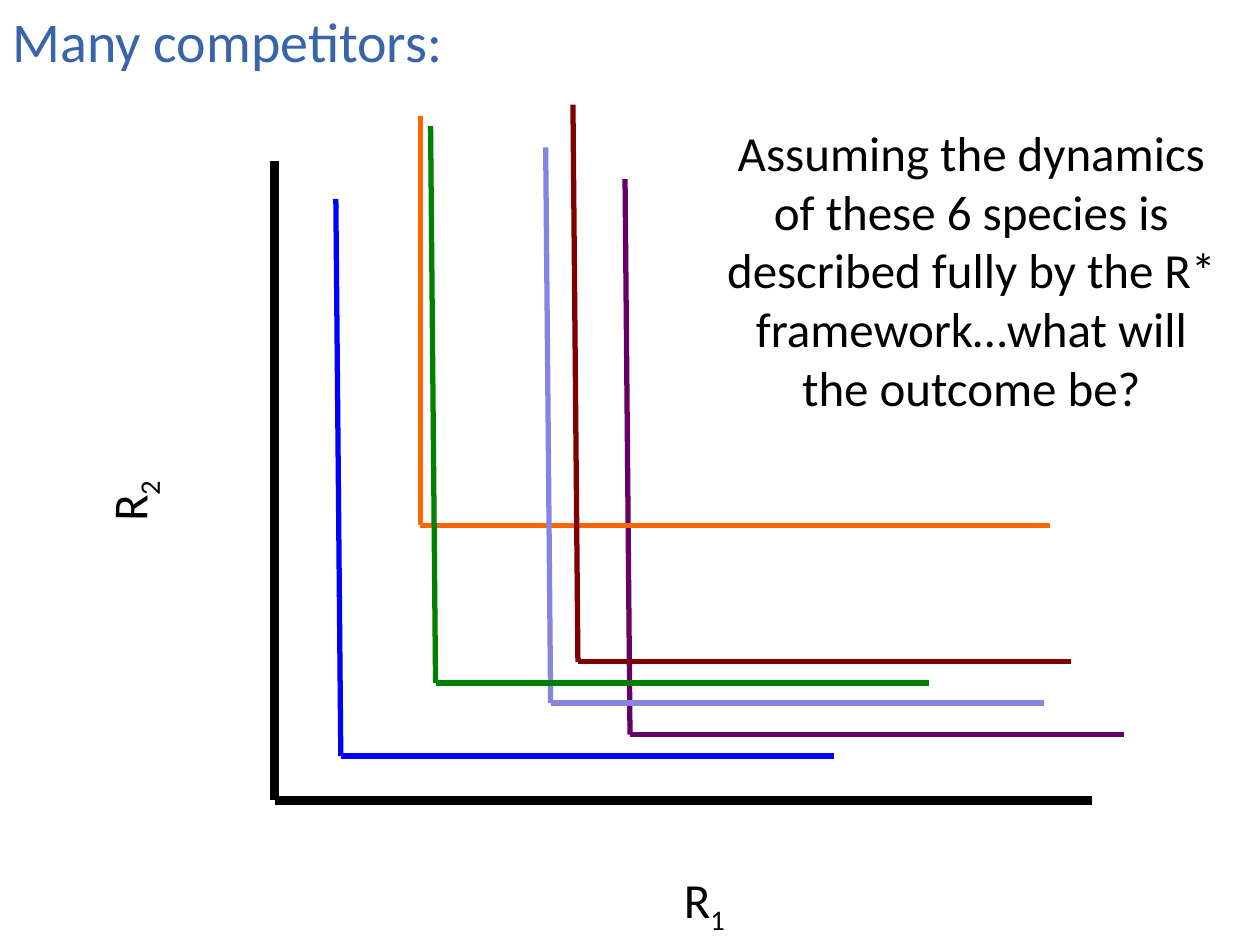
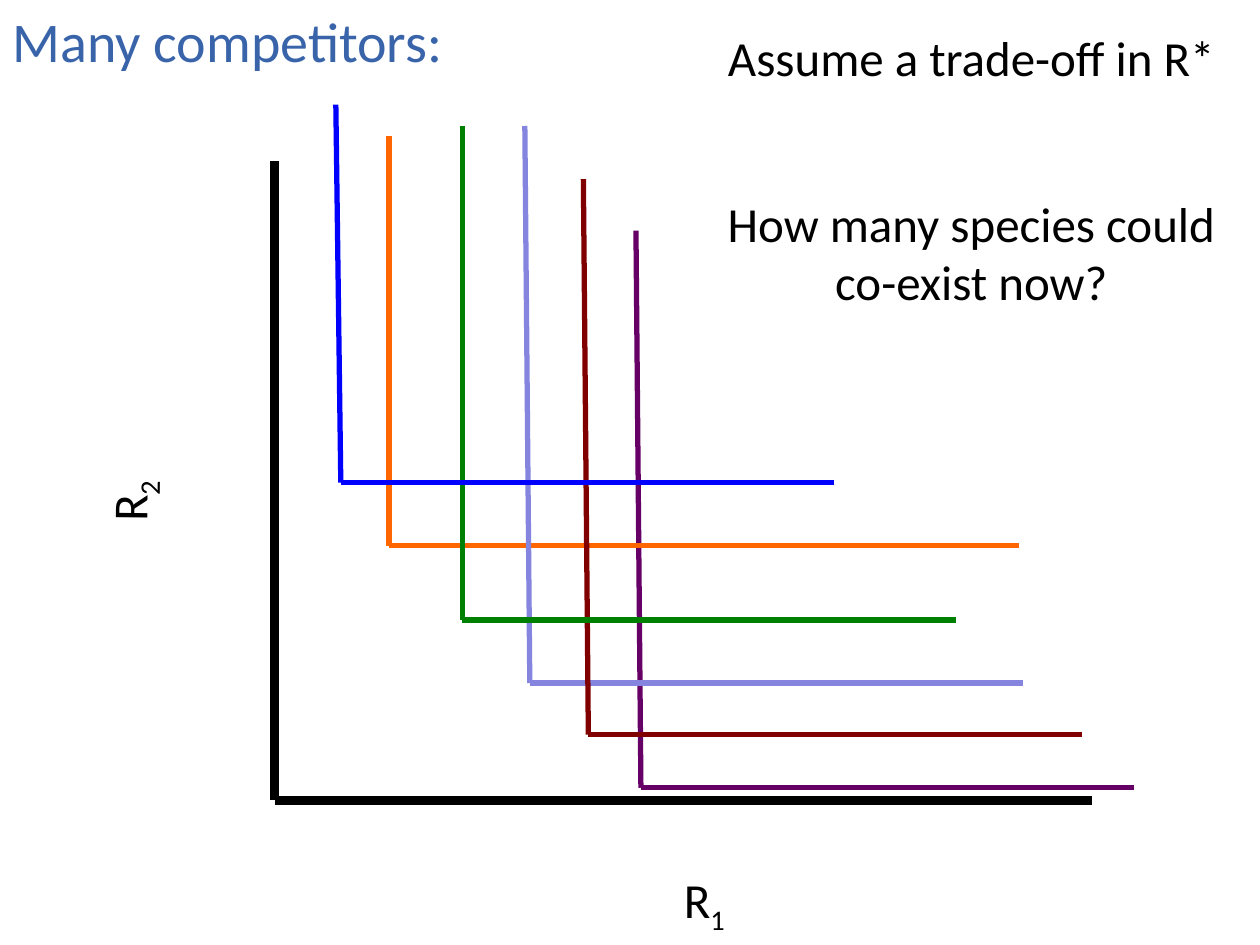
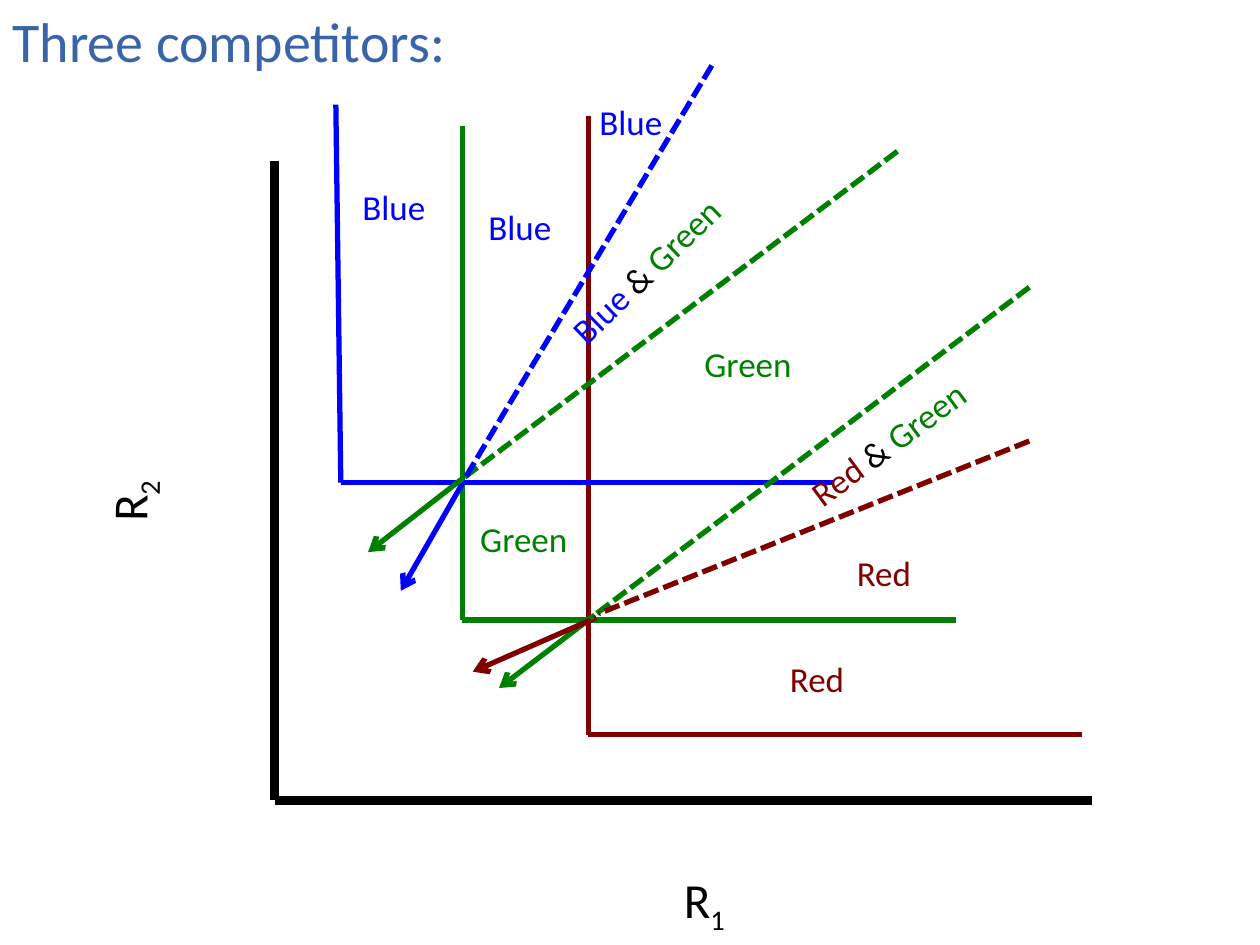
from dataclasses import dataclass

from lxml import etree
from pptx import Presentation
from pptx.dml.color import RGBColor
from pptx.enum import dml, shapes as kinds, text
from pptx.oxml.ns import qn
from pptx import util as u


@dataclass(frozen=True)
class Theme:
    font: str = "Calibri"
    title: str = "3964AA"
    ink: str = "000000"
    purple: str = "660066"
    orange: str = "FF6600"
    lavender: str = "8585E0"
    red: str = "800000"
    green: str = "008000"
    blue: str = "0000FF"
    title_size: int = 32
    body_size: int = 28
    region_size: int = 20
    axis_width: int = 5
    line_width: int = 3


THEME = Theme()


@dataclass(frozen=True)
class Box:
    """A region in centimetres."""
    left: float
    top: float
    width: float
    height: float

    def at(self, r1, r2):
        """Page position of a resource pair measured from the lower left corner."""
        return self.left + r1, self.top + self.height - r2

    def around(self, center, width, height):
        x, y = self.at(*center)
        return Box(x - width / 2, y - height / 2, width, height)


TITLE_BOX = Box(0, 0, 17.58, 1.63)
PLOT_BOX = Box(5.54, 3.25, 16.48, 12.88)


@dataclass(frozen=True)
class Isocline:
    """Zero-growth line of one species: its corner is (R1*, R2*)."""
    color: str
    r1: float
    r2: float
    top: float
    lean: float = 0.1
    length: float = 9.95


# Shared drawing helpers

def add_text(shapes, box, paragraphs, *, size=THEME.body_size, color=THEME.ink,
             align=text.PP_ALIGN.CENTER, wrap=True, rotation=0, gap=0):
    """Each paragraph is a list of (text, overrides) runs; gap is in points."""
    holder = shapes.add_textbox(*map(u.Cm, (box.left, box.top, box.width, box.height)))
    holder.rotation = rotation
    frame = holder.text_frame
    frame.word_wrap = wrap
    frame.auto_size = text.MSO_AUTO_SIZE.SHAPE_TO_FIT_TEXT
    for index, runs in enumerate(paragraphs):
        paragraph = frame.add_paragraph() if index else frame.paragraphs[0]
        paragraph.alignment = align
        if index:
            paragraph.space_before = u.Pt(gap)
        for words, overrides in runs:
            run = paragraph.add_run()
            run.text = words
            run.font.name = THEME.font
            run.font.size = u.Pt(size)
            run.font.color.rgb = RGBColor.from_string(overrides.get("color", color))
            if "baseline" in overrides:
                run.font._element.set("baseline", str(overrides["baseline"]))


def add_line(shapes, start, end, color, width=THEME.line_width, dashed=False, arrow=False):
    line = shapes.add_connector(kinds.MSO_CONNECTOR.STRAIGHT, *map(u.Cm, (*start, *end)))
    line.line.color.rgb = RGBColor.from_string(color)
    line.line.width = u.Pt(width)
    if dashed:
        line.line.dash_style = dml.MSO_LINE.SQUARE_DOT
    properties = line._element.spPr
    if arrow:
        etree.SubElement(properties.find(qn("a:ln")), qn("a:tailEnd"), type="arrow")
    etree.SubElement(properties, qn("a:effectLst"))


# Regions

def draw_title(slide, box, title):
    add_text(slide.shapes, box, [[(title, {})]], size=THEME.title_size,
             color=THEME.title, align=text.PP_ALIGN.LEFT)


def draw_axes(slide, box):
    axes = slide.shapes.add_group_shape().shapes
    origin = box.at(0, 0)
    for end in (box.at(0, box.height), box.at(box.width, 0)):
        add_line(axes, origin, end, THEME.ink, THEME.axis_width)
    for number, center, rotation in (("1", (8.66, -1.99), 0), ("2", (-2.95, 6.03), 270.6)):
        add_text(axes, box.around(center, 1.47, 1.45),
                 [[("R", {}), (number, {"baseline": -25000})]],
                 wrap=False, rotation=rotation)


def draw_isoclines(slide, box, isoclines):
    for species in isoclines:
        group = slide.shapes.add_group_shape().shapes
        corner = box.at(species.r1, species.r2)
        add_line(group, box.at(species.r1 - species.lean, species.top), corner, species.color)
        add_line(group, box.at(species.r1 + species.length, species.r2), corner, species.color)


def draw_vectors(slide, box, vectors):
    """Solid consumption arrows and the dashed borders that extend them."""
    for color, dashed, start, end in vectors:
        add_line(slide.shapes, box.at(*start), box.at(*end), color,
                 dashed=dashed, arrow=not dashed)


def draw_winners(slide, box, winners):
    """Name the species that persist in each region of the plot."""
    colors = {"Blue": THEME.blue, "Green": THEME.green, "Red": THEME.red}
    for names, center, width, rotation in winners:
        runs = [(names[0], {"color": colors[names[0]]})]
        for name in names[1:]:
            runs += [(" & ", {}), (name, {"color": colors[name]})]
        add_text(slide.shapes, box.around(center, width, 1.12), [runs],
                 size=THEME.region_size, rotation=rotation)


def draw_question(slide, box, lines):
    add_text(slide.shapes, box, [[(line, {})] for line in lines], gap=61)


# Slides

def add_plot_slide(deck, title, isoclines):
    slide = deck.slides.add_slide(deck.slide_layouts[6])
    draw_title(slide, TITLE_BOX, title)
    draw_axes(slide, PLOT_BOX)
    draw_isoclines(slide, PLOT_BOX, isoclines)
    return slide


GREEN_TRADE_OFF = Isocline(THEME.green, 3.78, 3.63, 13.59, lean=0)
BLUE_TRADE_OFF = Isocline(THEME.blue, 1.33, 6.4, 14.02)

SIX_SPECIES = [
    Isocline(THEME.purple, 7.16, 1.32, 12.52),
    Isocline(THEME.orange, 2.93, 5.54, 13.79, lean=0, length=12.7),
    Isocline(THEME.lavender, 5.56, 1.96, 13.16),
    Isocline(THEME.red, 6.11, 2.79, 14.02),
    Isocline(THEME.green, 3.24, 2.36, 13.59),
    Isocline(THEME.blue, 1.33, 0.89, 12.12),
]
SIX_TRADE_OFFS = [
    Isocline(THEME.purple, 7.38, 0.25, 11.48),
    Isocline(THEME.orange, 2.3, 5.13, 13.39, lean=0, length=12.7),
    Isocline(THEME.lavender, 5.14, 2.36, 13.59),
    Isocline(THEME.red, 6.32, 1.32, 12.52),
    GREEN_TRADE_OFF,
    BLUE_TRADE_OFF,
]
THREE_TRADE_OFFS = [
    Isocline(THEME.red, 6.32, 1.32, 13.79, lean=0),
    GREEN_TRADE_OFF,
    BLUE_TRADE_OFF,
]
# Colour, dashed, start and end
VECTORS = [
    (THEME.green, False, (3.78, 6.48), (1.88, 5)),
    (THEME.blue, False, (3.78, 6.38), (2.54, 4.22)),
    (THEME.green, True, (12.55, 13.08), (3.68, 6.4)),
    (THEME.blue, True, (8.81, 14.81), (3.81, 6.45)),
    (THEME.green, False, (6.45, 3.73), (4.52, 2.26)),
    (THEME.red, False, (6.48, 3.68), (3.99, 2.59)),
    (THEME.green, True, (15.21, 10.34), (6.35, 3.66)),
    (THEME.red, True, (15.21, 7.24), (6.53, 3.76)),
]
# Species, centre, width and rotation
NARROW, WIDE = 1.9, 6.27
WINNERS = [
    (["Blue"], (2.4, 11.96), NARROW, 0),
    (["Blue"], (4.94, 11.56), NARROW, 0),
    (["Blue"], (7.18, 13.67), NARROW, 0),
    (["Blue", "Green"], (7.48, 10.67), WIDE, 316),
    (["Green"], (9.54, 8.79), WIDE, 0),
    (["Green"], (5.02, 5.26), WIDE, 0),
    (["Red", "Green"], (12.36, 7.19), WIDE, 323.6),
    (["Red"], (12.28, 4.57), WIDE, 0),
    (["Red"], (10.93, 2.44), WIDE, 0),
]


def main():
    deck = Presentation()
    deck.slide_width, deck.slide_height = u.Cm(25.4), u.Cm(19.05)

    outcome = add_plot_slide(deck, "Many competitors:", SIX_SPECIES)
    draw_question(outcome, Box(14.4, 2.34, 10.36, 7.44), [
        "Assuming the dynamics of these 6 species is described fully by the R* "
        "framework…what will the outcome be?"])

    trade_off = add_plot_slide(deck, "Many competitors:", SIX_TRADE_OFFS)
    draw_question(trade_off, Box(14.4, 0.43, 10.36, 7.44), [
        "Assume a trade-off in R*", "How many species could co-exist now?"])

    coexistence = add_plot_slide(deck, "Three competitors:", THREE_TRADE_OFFS)
    draw_vectors(coexistence, PLOT_BOX, VECTORS)
    draw_winners(coexistence, PLOT_BOX, WINNERS)

    deck.save("out.pptx")


if __name__ == "__main__":
    main()
